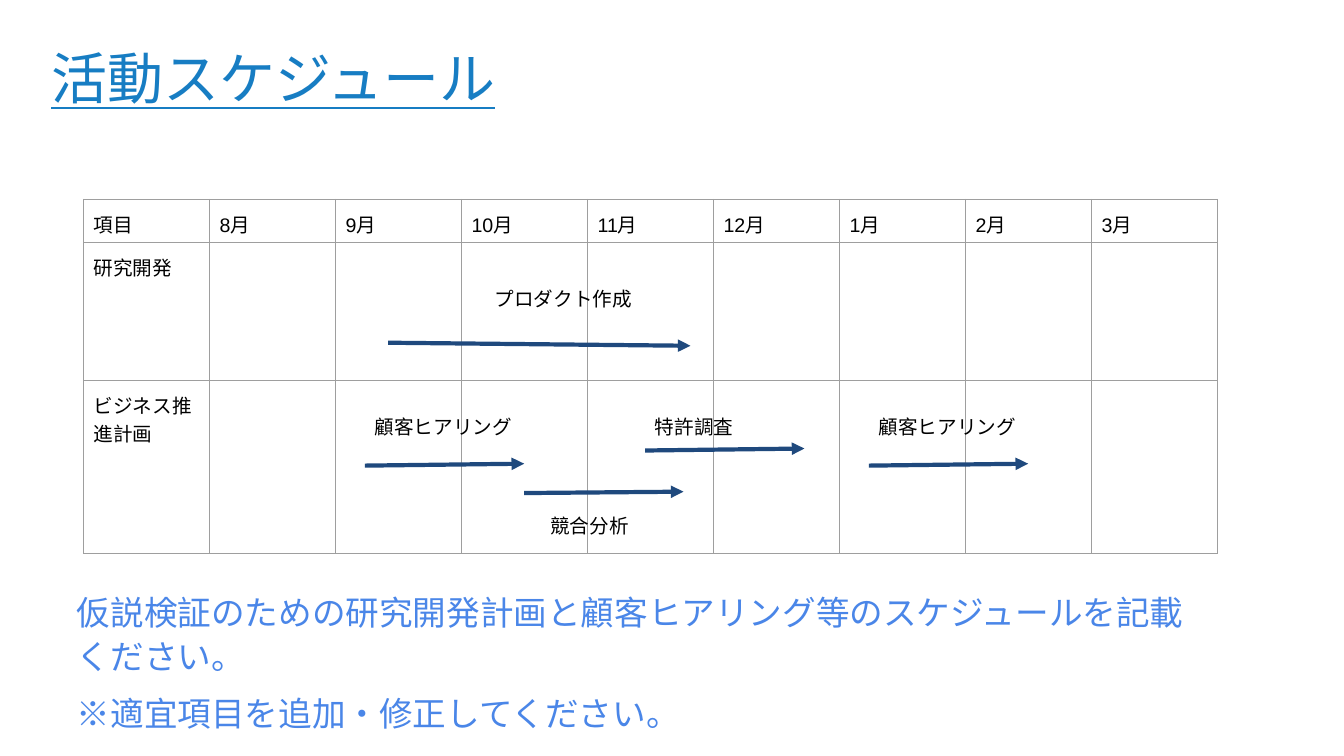
"""Build the activity schedule slide with its table and arrows."""
from dataclasses import dataclass

from lxml import etree
from pptx import Presentation
from pptx import util as u
from pptx.dml.color import RGBColor
from pptx.enum import shapes, text
from pptx.oxml import ns
from pptx.slide import Slide


def color(hex_code):
    return RGBColor.from_string(hex_code)


def write(frame, content, size=14, hue="000000", font="Noto Sans CJK JP",
          inset=(7.2, 7.2, 7.2, 7.2), underline=None, spacing=None, before=None):
    frame.word_wrap = True
    frame.auto_size = text.MSO_AUTO_SIZE.SHAPE_TO_FIT_TEXT
    frame.vertical_anchor = text.MSO_ANCHOR.TOP
    frame.margin_left, frame.margin_top, frame.margin_right, frame.margin_bottom = map(u.Pt, inset)
    frame.text = content
    for paragraph in frame.paragraphs:
        paragraph.alignment = text.PP_ALIGN.LEFT
        paragraph.line_spacing = spacing
        paragraph.space_before = None if before is None else u.Pt(before)
        run = paragraph.runs[0]
        run.font.size = u.Pt(size)
        run.font.name = font
        run.font.underline = underline
        run.font.color.rgb = color(hue)
        east_asian = etree.Element(ns.qn("a:ea"), typeface="Noto Sans CJK JP")
        run.font._element.find(ns.qn("a:latin")).addnext(east_asian)


@dataclass
class ScheduleSlide:
    slide: Slide
    title_hue: str = "177DC3"
    note_hue: str = "4A86E8"
    arrow_hue: str = "1F497D"
    grid_hue: str = "9E9E9E"

    def title(self, content, *box):
        heading = self.slide.shapes.title
        heading.left, heading.top, heading.width, heading.height = map(u.Pt, box)
        write(heading.text_frame, content, size=40, hue=self.title_hue,
              inset=(0, 0.9, 0, 0), underline=True)

    def label(self, content, *box, **style):
        frame = self.slide.shapes.add_textbox(*map(u.Pt, box)).text_frame
        write(frame, content, **style)

    def arrow(self, *ends):
        line = self.slide.shapes.add_connector(shapes.MSO_CONNECTOR.STRAIGHT, *map(u.Pt, ends))
        line.line.width = u.Pt(3)
        line.line.color.rgb = color(self.arrow_hue)
        etree.SubElement(line.line._get_or_add_ln(), ns.qn("a:tailEnd"), type="triangle")
        etree.SubElement(line._element.spPr, ns.qn("a:effectLst"))

    def border(self, cell):
        properties = cell._tc.get_or_add_tcPr()
        for side in "LRTB":
            edge = etree.SubElement(properties, ns.qn(f"a:ln{side}"), w=str(u.Pt(0.75)))
            fill = etree.SubElement(edge, ns.qn("a:solidFill"))
            etree.SubElement(fill, ns.qn("a:srgbClr"), val=self.grid_hue)

    def table(self, rows, heights, left, top, column_width):
        columns = len(rows[0])
        grid = self.slide.shapes.add_table(
            len(rows), columns, u.Pt(left), u.Pt(top),
            u.Pt(column_width * columns), u.Pt(sum(heights))).table
        grid.first_row = grid.horz_banding = False
        for row, height, entries in zip(grid.rows, heights, rows):
            row.height = u.Pt(height)
            for cell, entry in zip(row.cells, entries):
                self.border(cell)
                cell.fill.background()
                cell.margin_left = cell.margin_top = cell.margin_right = u.Pt(7.2)
                cell.margin_bottom = u.Pt(3)
                if entry:
                    self.cell_text(cell, entry)

    def cell_text(self, cell, entry):
        margins = [m.pt for m in (cell.margin_left, cell.margin_top,
                                  cell.margin_right, cell.margin_bottom)]
        write(cell.text_frame, entry, font="Arial")
        cell.margin_left, cell.margin_top, cell.margin_right, cell.margin_bottom = map(u.Pt, margins)
        cell.text_frame._txBody.bodyPr.clear()


MONTH_WIDTH = 90
MONTHS = [f"{month}月" for month in (8, 9, 10, 11, 12, 1, 2, 3)]
ROWS = [["項目", *MONTHS]] + [[item] + [""] * len(MONTHS)
                            for item in ("研究開発", "ビジネス推進計画")]
HEARING = 260.6
ACTIVITIES = [
    ("プロダクト作成", (346.3, 198, 113.8), (277.2, 244.8, 493.2, 247)),
    ("競合分析", (385.9, 360, 90.7), (374.4, 352.2, 488.2, 351.2)),
    ("特許調査", (460.8, 289.4, 90.7), (460.8, 321.8, 574.6, 320.4)),
] + [
    ("顧客ヒアリング", (start, 289.4, 113.8), (start, 332.6, start + 113.8, 331.2))
    for start in (HEARING, HEARING + 4 * MONTH_WIDTH)
]

deck = Presentation()
deck.slide_width, deck.slide_height = u.Pt(960), u.Pt(540)
schedule = ScheduleSlide(deck.slides.add_slide(deck.slide_layouts[5]))
schedule.title("活動スケジュール", 36.7, 30.2, 446.4, 49.7)
schedule.label("仮説検証のための研究開発計画と顧客ヒアリング等のスケジュールを記載ください。\n"
               "※適宜項目を追加・修正してください。",
               55, 412.6, 794.9, 122.4, size=24, hue=schedule.note_hue,
               inset=(0, 7.9, 0, 0), spacing=1.08, before=10.3)
schedule.table(ROWS, (30.7, 98.6, 124.1), 59.6, 142.3, MONTH_WIDTH)
for activity, (left, top, width), ends in ACTIVITIES:
    schedule.label(activity, left, top, width, 31.7)
    schedule.arrow(*ends)
deck.save("out.pptx")
